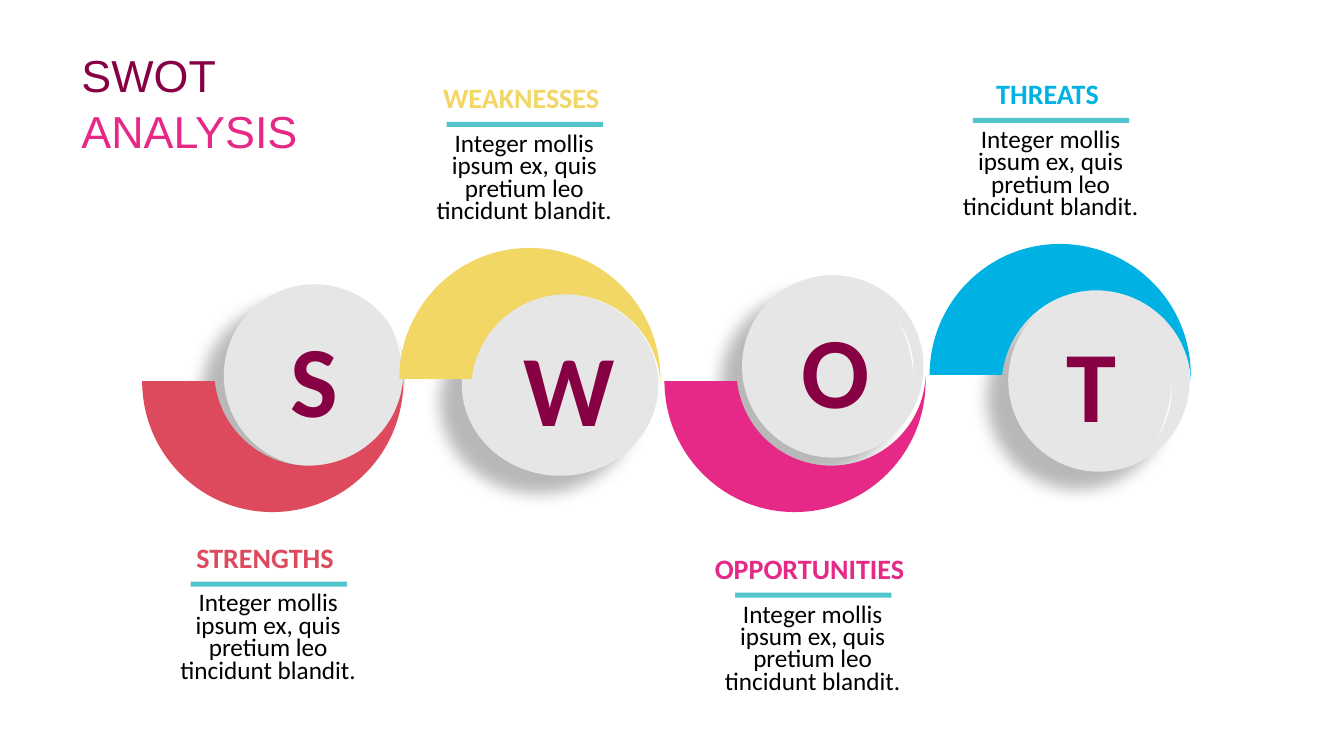
from dataclasses import dataclass

from lxml import etree
from pptx import Presentation
from pptx.dml.color import RGBColor
from pptx.enum.shapes import MSO_SHAPE as Shape
from pptx.enum.text import MSO_ANCHOR as Anchor, MSO_AUTO_SIZE as AutoSize, PP_ALIGN as Align
from pptx.oxml.ns import qn
from pptx.util import Pt

PX = 9144  # 100 px to the inch
Point = tuple[int, int]


@dataclass(frozen=True)
class Theme:
    plum: str = "870043"
    pink: str = "E62987"
    red: str = "DD4A5D"
    yellow: str = "F2D764"
    blue: str = "00B2E3"
    teal: str = "53C6CD"
    disc: str = "E6E6E6"
    white: str = "FFFFFF"
    black: str = "000000"
    title_font: str = "Arial"
    font: str = "Calibri"
    letter: int = 72
    title: int = 32
    heading: int = 20
    body: int = 18


@dataclass(frozen=True)
class Box:
    x: int
    y: int
    w: int
    h: int

    def emu(self) -> list[int]:
        return [v * PX for v in (self.x, self.y, self.w, self.h)]


@dataclass(frozen=True)
class Part:
    heading: str
    color: str
    disc: Box
    nudge: int       # sideways shift of the letter
    crescent: Point  # left end of the flat edge
    glint: Point     # end away from the crescent's tip
    side: int        # 1 bulges down, -1 bulges up
    label: Point


T = Theme()
BODY = "Integer mollis ipsum ex, quis pretium leo tincidunt blandit."
PARTS = [
    Part("STRENGTHS", T.red, Box(222, 282, 180, 181), 0, (141, 378), (386, 320), 1, (146, 531)),
    Part("WEAKNESSES", T.yellow, Box(458, 291, 195, 181), 9, (396, 376), (642, 434), -1, (400, 75)),
    Part("OPPORTUNITIES", T.pink, Box(736, 273, 180, 181), 3, (659, 378), (892, 320), 1, (686, 542)),
    Part("THREATS", T.blue, Box(1000, 287, 180, 181), -7, (922, 372), (1148, 434), -1, (922, 71)),
]

# Start point, then two control points and an end point for each curve
CRESCENT = [(259, -5), (259, -3), (259, -2), (259, 0),
            (259, 72), (201, 130), (129, 130),
            (58, 130), (0, 72), (0, 0),
            (72, 0), (72, 0), (72, 0),
            (77, 47), (117, 84), (165, 84),
            (216, 84), (257, 44), (259, -5)]
GLINT = [(14, 48), (14, 50), (14, 51), (14, 53),
         (13, 34), (8, 15), (0, 0),
         (9, 14), (14, 31), (14, 48)]


def paint(sp, color: str) -> None:
    sp.shadow.inherit = False
    sp.fill.solid()
    sp.fill.fore_color.rgb = RGBColor.from_string(color)
    sp.line.fill.background()


def style(p, text: str, font: str, size: int, color: str, bold: bool = False,
          align: Align = Align.CENTER, spacing: int | None = None) -> None:
    p.text = text
    p.alignment = align
    if spacing:
        p.line_spacing = Pt(spacing)
    p.font.name, p.font.size, p.font.bold = font, Pt(size), bold
    p.font.color.rgb = RGBColor.from_string(color)


def add_text(s, box: Box):
    tf = s.shapes.add_textbox(*box.emu()).text_frame
    tf.word_wrap = True
    tf.auto_size = AutoSize.SHAPE_TO_FIT_TEXT
    return tf


def add_curves(s, outline: list[Point], origin: Point, side: int, color: str) -> None:
    x, y = origin
    points = [(x + u, y + side * v) for u, v in outline]
    fb = s.shapes.build_freeform(*points[0], scale=PX)
    fb.add_line_segments(points[1:], close=True)
    sp = fb.convert_to_shape()
    # Join every three straight segments into one cubic curve
    lines = list(sp._element.iter(qn("a:lnTo")))
    for i in range(0, len(lines), 3):
        curve = etree.Element(qn("a:cubicBezTo"))
        lines[i].addprevious(curve)
        for line in lines[i:i + 3]:
            curve.append(line[0])
            line.getparent().remove(line)
    paint(sp, color)


def add_disc(s, part: Part) -> None:
    sp = s.shapes.add_shape(Shape.OVAL, *part.disc.emu())
    paint(sp, T.disc)
    effects = sp._element.spPr.find(qn("a:effectLst"))
    shadow = etree.SubElement(effects, qn("a:outerShdw"), blurRad=str(Pt(11.8)), dist=str(Pt(19.7)),
                              dir=str(141 * 60000), algn="ctr", rotWithShape="0")
    clr = etree.SubElement(shadow, qn("a:srgbClr"), val=T.black)
    etree.SubElement(clr, qn("a:alpha"), val="28000")
    tf = sp.text_frame
    tf.word_wrap = True
    tf.vertical_anchor = Anchor.MIDDLE
    tf.margin_top = 9 * PX
    tf.margin_left = (10 + max(0, 2 * part.nudge)) * PX
    tf.margin_right = (10 + max(0, -2 * part.nudge)) * PX
    style(tf.paragraphs[0], part.heading[0], T.font, T.letter, T.plum, bold=True)


def add_label(s, part: Part) -> None:
    x, y = part.label
    tf = add_text(s, Box(x, y, 241, 44))
    tf.margin_right = 17 * PX
    style(tf.paragraphs[0], part.heading, T.font, T.heading, part.color, bold=True)
    paint(s.shapes.add_shape(Shape.RECTANGLE, *Box(x + 43, y + 46, 155, 5).emu()), T.teal)
    tf = add_text(s, Box(x + 21, y + 54, 198, 101))
    style(tf.paragraphs[0], BODY, T.font, T.body, T.black, spacing=16)


def main() -> None:
    prs = Presentation()
    prs.slide_width, prs.slide_height = 1333 * PX, 750 * PX
    s = prs.slides.add_slide(prs.slide_layouts[6])

    # Chain of discs and crescents
    for part in PARTS:
        add_disc(s, part)
    for part in PARTS:
        add_curves(s, GLINT, part.glint, part.side, T.white)
        add_curves(s, CRESCENT, part.crescent, part.side, part.color)

    # Title
    tf = add_text(s, Box(71, 40, 272, 122))
    for p, text, color in ((tf.paragraphs[0], "SWOT", T.plum), (tf.add_paragraph(), "ANALYSIS", T.pink)):
        style(p, text, T.title_font, T.title, color, align=Align.LEFT, spacing=40)

    # Headings with their descriptions
    for part in PARTS:
        add_label(s, part)

    prs.save("out.pptx")


if __name__ == "__main__":
    main()
